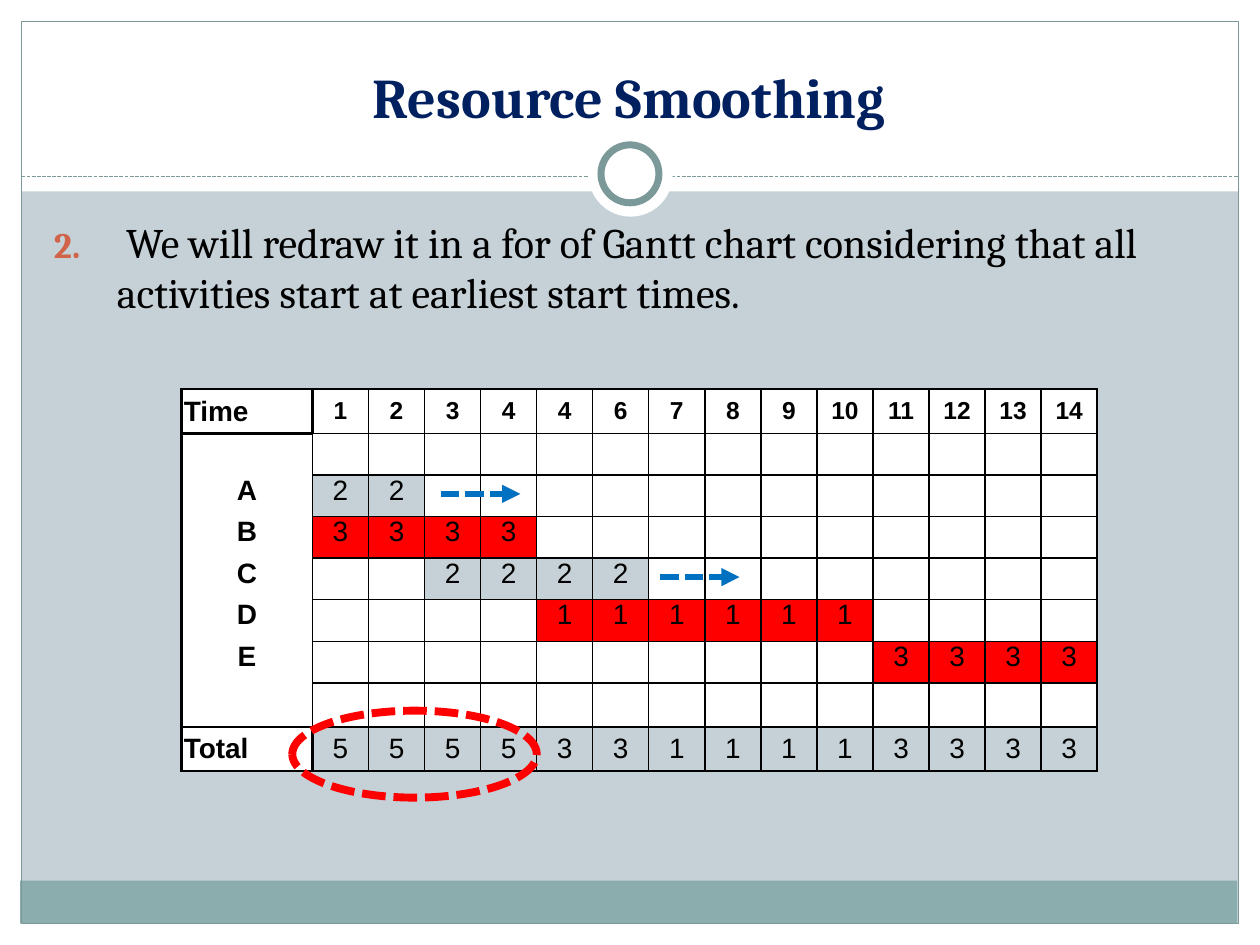
from dataclasses import dataclass
from typing import Optional

import lxml.etree
import pptx
import pptx.dml.color
import pptx.enum.dml
import pptx.enum.shapes
import pptx.enum.text
import pptx.oxml.ns
import pptx.util

Inches = pptx.util.Inches
Pt = pptx.util.Pt
qn = pptx.oxml.ns.qn
Shape = pptx.enum.shapes.MSO_SHAPE
Anchor = pptx.enum.text.MSO_ANCHOR
Align = pptx.enum.text.PP_ALIGN
DASHED = pptx.enum.dml.MSO_LINE.SQUARE_DOT


@dataclass(frozen=True)
class Theme:
    backdrop: str = "C5D1D7"
    white: str = "FFFFFF"
    black: str = "000000"
    band: str = "8CADAE"
    rule: str = "7C999A"
    title: str = "002060"
    number: str = "D16349"
    critical: str = "FF0000"
    arrow: str = "0070C0"
    heading_font: str = "Cambria"
    table_font: str = "Arial"
    title_size: int = 32
    body_size: int = 24
    label_size: int = 16
    time_size: int = 14
    blank_size: int = 10


THEME = Theme()


@dataclass(frozen=True)
class Panel:
    kind: int
    box: tuple
    fill: Optional[str] = None
    line: Optional[str] = None
    weight: float = 0.75
    dashed: bool = False


@dataclass(frozen=True)
class Stroke:
    start: tuple
    end: tuple
    color: str
    weight: float
    arrow: bool = False


@dataclass(frozen=True)
class Activity:
    name: str
    start: int
    end: int
    workers: int
    critical: bool


FRAME = [
    Panel(Shape.RECTANGLE, (0, 7.33, 10, 0.17), THEME.white),
    Panel(Shape.RECTANGLE, (0, 0, 10, 1.52), THEME.white),
    Panel(Shape.RECTANGLE, (0, 0, 0.17, 7.5), THEME.white),
    Panel(Shape.RECTANGLE, (9.83, 0, 0.17, 7.5), THEME.white),
    Panel(Shape.RECTANGLE, (0.16, 6.99, 9.66, 0.34), THEME.band),
    Panel(Shape.RECTANGLE, (0.17, 0.17, 9.66, 7.16), line=THEME.rule),
]
DIVIDER = Stroke((0.17, 1.4), (9.83, 1.4), THEME.rule, 0.75)
RINGS = [
    Panel(Shape.OVAL, (4.67, 1.05, 0.67, 0.67), THEME.white),
    Panel(Shape.OVAL, (4.77, 1.15, 0.46, 0.46), THEME.white, THEME.rule, 4),
]
PEAK = Panel(Shape.OVAL, (2.32, 5.64, 1.94, 0.69), line=THEME.critical, weight=4.5, dashed=True)
FLOATS = [
    Stroke((x, y), (x + 0.63, y), THEME.arrow, 3.5, True)
    for x, y in ((3.5, 3.92), (5.24, 4.58))
]
ACTIVITIES = [
    Activity("A", 1, 2, 2, False),
    Activity("B", 1, 4, 3, True),
    Activity("C", 3, 6, 2, False),
    Activity("D", 5, 10, 1, True),
    Activity("E", 11, 14, 3, True),
]
TIMES = [1, 2, 3, 4, 4, 6, 7, 8, 9, 10, 11, 12, 13, 14]
SLOT_WIDTH = (8.19 - 0.54 - 1.04 - 0.38) / len(TIMES)
COLUMNS = [0.54, 1.04] + [SLOT_WIDTH] * len(TIMES) + [0.38]
ROWS = [0.28, 0.35] + [0.33] * 6 + [0.35] * 2
HEADER, FIRST_ACTIVITY, TOTAL = 1, 3, 9
LABEL, FIRST_SLOT, RIGHT_MARGIN = 1, 2, 16


def rgb(color: str) -> pptx.dml.color.RGBColor:
    return pptx.dml.color.RGBColor.from_string(color)


def style_line(line, color: str, weight: float, dashed: bool) -> None:
    line.color.rgb = rgb(color)
    line.width = Pt(weight)
    if dashed:
        line.dash_style = DASHED


def style_run(run, font: str, size: float, color: str, bold: bool) -> None:
    run.font.name, run.font.size, run.font.bold = font, Pt(size), bold
    run.font.color.rgb = rgb(color)


def fill_with(fill, color: Optional[str]) -> None:
    if color:
        fill.solid()
        fill.fore_color.rgb = rgb(color)
    else:
        fill.background()


def draw_panel(slide, panel: Panel) -> None:
    shape = slide.shapes.add_shape(panel.kind, *map(Inches, panel.box))
    shape.shadow.inherit = False
    fill_with(shape.fill, panel.fill)
    if panel.line:
        style_line(shape.line, panel.line, panel.weight, panel.dashed)
    else:
        shape.line.fill.background()


def draw_stroke(slide, stroke: Stroke) -> None:
    connector = slide.shapes.add_connector(
        pptx.enum.shapes.MSO_CONNECTOR.STRAIGHT, *map(Inches, stroke.start + stroke.end))
    style_line(connector.line, stroke.color, stroke.weight, True)
    properties = connector.element.spPr
    if stroke.arrow:
        lxml.etree.SubElement(properties.find(qn("a:ln")), qn("a:tailEnd"), type="triangle")
    lxml.etree.SubElement(properties, qn("a:effectLst"))


def add_paragraph_box(slide, box: tuple, anchor):
    frame = slide.shapes.add_textbox(*map(Inches, box)).text_frame
    frame.word_wrap = True
    frame.vertical_anchor = anchor
    return frame.paragraphs[0]


def draw_title(slide) -> None:
    title = add_paragraph_box(slide, (0.33, 0.25, 9.33, 0.83), Anchor.BOTTOM)
    title.text = "Resource Smoothing"
    title.alignment = Align.CENTER
    style_run(title.runs[0], THEME.heading_font, THEME.title_size, THEME.title, True)


def draw_step(slide) -> None:
    step = add_paragraph_box(slide, (0.33, 1.67, 9.36, 5), Anchor.TOP)
    step.space_before = Pt(0.2 * THEME.body_size)
    sentence = ("We will redraw it in a for of Gantt chart considering that all "
                "activities start at earliest start times.")
    for text, bold in ((" ", True), (sentence, False)):
        run = step.add_run()
        run.text = text
        style_run(run, THEME.heading_font, THEME.body_size, THEME.black, bold)
    properties = step._p.get_or_add_pPr()
    properties.set("marL", str(Inches(0.5)))
    properties.set("indent", str(Inches(-0.5)))
    color = lxml.etree.SubElement(properties, qn("a:buClr"))
    lxml.etree.SubElement(color, qn("a:srgbClr"), val=THEME.number)
    lxml.etree.SubElement(properties, qn("a:buSzPct"), val="85000")
    lxml.etree.SubElement(properties, qn("a:buAutoNum"), type="arabicPeriod", startAt="2")


def vertical_edge(row: int, x: int) -> float:
    if not (HEADER <= row <= TOTAL and LABEL <= x <= RIGHT_MARGIN):
        return 0
    strong = x == LABEL or (row in (HEADER, TOTAL) and x in (FIRST_SLOT, RIGHT_MARGIN))
    return 1.5 if strong else 1


def horizontal_edge(y: int, column: int) -> float:
    if not (HEADER <= y <= TOTAL + 1 and LABEL <= column < RIGHT_MARGIN):
        return 0
    if y in (HEADER, TOTAL + 1):
        return 1.5
    if column == LABEL:
        return 1.5 if y in (HEADER + 1, TOTAL) else 0
    return 1


def draw_borders(cell, row: int, column: int) -> None:
    edges = {"a:lnL": vertical_edge(row, column), "a:lnR": vertical_edge(row, column + 1),
             "a:lnT": horizontal_edge(row, column), "a:lnB": horizontal_edge(row + 1, column)}
    properties = cell._tc.get_or_add_tcPr()
    for tag, weight in edges.items():
        line = lxml.etree.SubElement(properties, qn(tag), w=str(Pt(weight)))
        if weight:
            solid = lxml.etree.SubElement(line, qn("a:solidFill"))
            lxml.etree.SubElement(solid, qn("a:srgbClr"), val=THEME.black)
        else:
            lxml.etree.SubElement(line, qn("a:noFill"))


def cell_content(row: int, column: int) -> tuple[str, Optional[str]]:
    if row < HEADER or not LABEL <= column < RIGHT_MARGIN:
        return "", None
    slot = column - FIRST_SLOT + 1
    if row == HEADER:
        return ("Time" if column == LABEL else str(TIMES[slot - 1])), THEME.white
    if row == TOTAL:
        if column == LABEL:
            return "Total", THEME.white
        return str(sum(a.workers for a in ACTIVITIES if a.start <= slot <= a.end)), None
    if FIRST_ACTIVITY <= row < FIRST_ACTIVITY + len(ACTIVITIES):
        activity = ACTIVITIES[row - FIRST_ACTIVITY]
        if column == LABEL:
            return activity.name, THEME.white
        if activity.start <= slot <= activity.end:
            return str(activity.workers), THEME.critical if activity.critical else None
    return "", THEME.white


def draw_cell(cell, row: int, column: int) -> None:
    text, color = cell_content(row, column)
    cell.margin_left = cell.margin_right = Inches(0.02)
    cell.margin_top = cell.margin_bottom = 0
    ends = row in (HEADER, TOTAL)
    cell.vertical_anchor = Anchor.MIDDLE if ends else Anchor.TOP
    draw_borders(cell, row, column)
    fill_with(cell.fill, color)
    paragraph = cell.text_frame.paragraphs[0]
    if not text:
        lxml.etree.SubElement(paragraph._p, qn("a:endParaRPr"), sz=str(THEME.blank_size * 100))
        return
    paragraph.text = text
    paragraph.alignment = Align.LEFT if ends and column == LABEL else Align.CENTER
    size = THEME.time_size if row == HEADER and column != LABEL else THEME.label_size
    style_run(paragraph.runs[0], THEME.table_font, size, THEME.black,
              row == HEADER or column == LABEL)


def draw_gantt(slide) -> None:
    gantt = slide.shapes.add_table(
        len(ROWS), len(COLUMNS), *map(Inches, (0.9, 2.81, sum(COLUMNS), sum(ROWS)))).table
    gantt.first_row = gantt.horz_banding = False
    for column, width in enumerate(COLUMNS):
        gantt.columns[column].width = Inches(width)
    for row, height in enumerate(ROWS):
        gantt.rows[row].height = Inches(height)
        for column in range(len(COLUMNS)):
            draw_cell(gantt.cell(row, column), row, column)


def main() -> None:
    deck = pptx.Presentation()
    deck.slide_width, deck.slide_height = Inches(10), Inches(7.5)
    slide = deck.slides.add_slide(deck.slide_layouts[6])
    fill_with(slide.background.fill, THEME.backdrop)
    for panel in FRAME:
        draw_panel(slide, panel)
    draw_stroke(slide, DIVIDER)
    for ring in RINGS:
        draw_panel(slide, ring)
    draw_title(slide)
    draw_step(slide)
    draw_gantt(slide)
    draw_panel(slide, PEAK)
    for arrow in FLOATS:
        draw_stroke(slide, arrow)
    deck.save("out.pptx")


if __name__ == "__main__":
    main()
